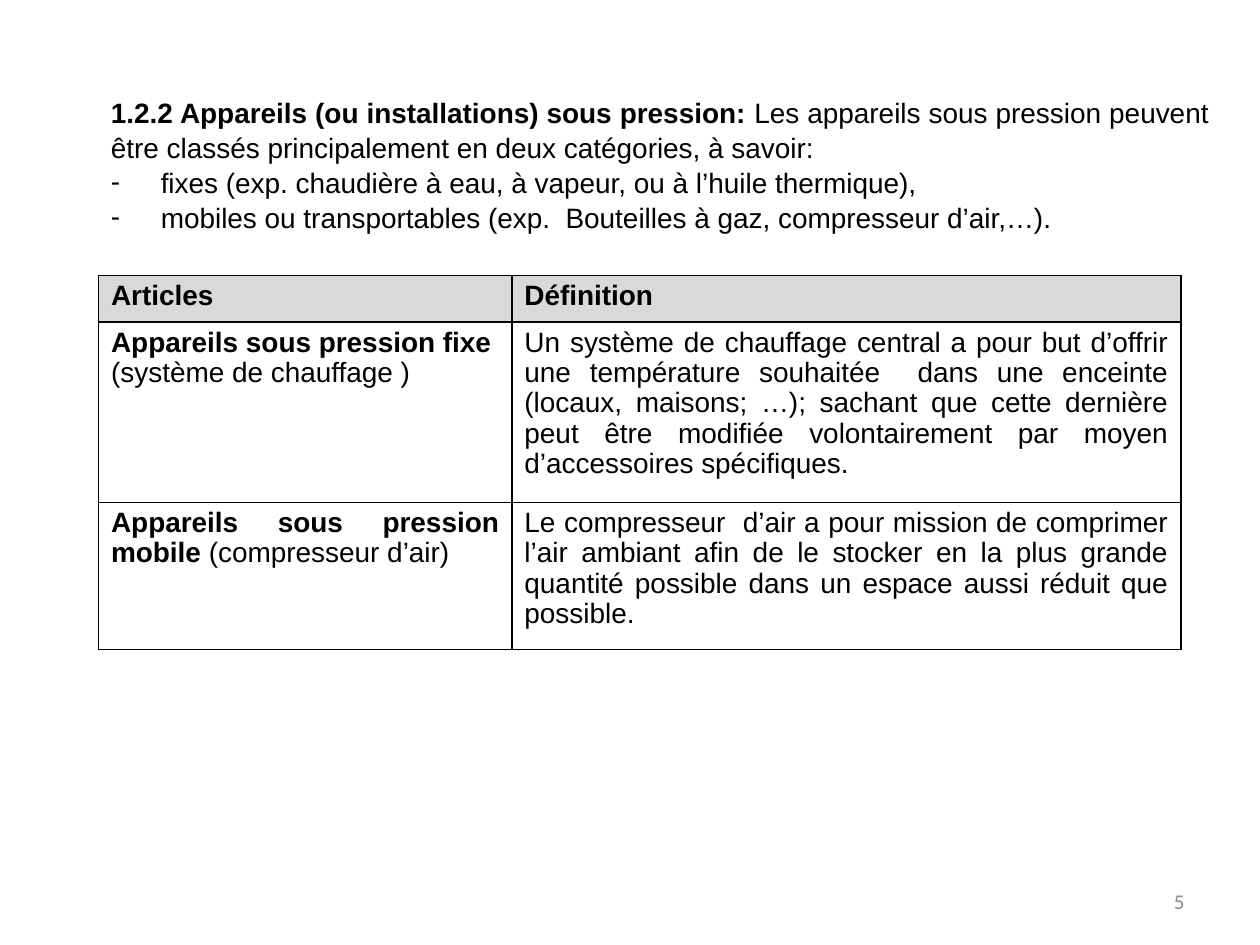
from lxml import etree
from pptx import Presentation
from pptx.dml.color import RGBColor
from pptx.enum import text
from pptx.oxml import ns
from pptx.util import Pt

HUES = {"ink": "000000", "head": "D9D9D9", "page": "8C8C8C"}


def add(node, tag, **attrs):
    return etree.SubElement(node, ns.qn(tag), attrs)


def write(frame, paras, lead=1.0, align="JUSTIFY", font="Arial", size=16, hue="ink"):
    frame.word_wrap = True
    for i, runs in enumerate(paras):
        para = frame.paragraphs[0] if i == 0 else frame.add_paragraph()
        para.alignment = getattr(text.PP_ALIGN, align)
        para.line_spacing = lead
        for words, bold in runs:
            run = para.add_run()
            run.text = words
            run.font.name = font
            run.font.size = Pt(size)
            run.font.bold = bold
            run.font.color.rgb = RGBColor.from_string(HUES[hue])


deck = Presentation()
deck.slide_width, deck.slide_height = Pt(720), Pt(540)
slide = deck.slides.add_slide(deck.slide_layouts[6])

page = slide.shapes.add_textbox(Pt(516), Pt(500.5), Pt(168), Pt(28.75)).text_frame
page.vertical_anchor = text.MSO_ANCHOR.MIDDLE
write(page, [[("5", False)]], align="RIGHT", font="Calibri", size=12, hue="page")

intro = slide.shapes.add_textbox(Pt(56.3), Pt(50.4), Pt(641.5), Pt(85)).text_frame
write(intro, [
    [("1.2.2 Appareils (ou installations) sous pression: ", True),
     ("Les appareils sous pression peuvent être classés principalement en deux catégories, à savoir:", False)],
    [("fixes (exp. chaudière à eau, à vapeur, ou à l’huile thermique),", False)],
    [("mobiles ou transportables (exp.  Bouteilles à gaz, compresseur d’air,…).", False)],
], lead=1.04)
for para in intro.paragraphs[1:]:
    props = para._p.get_or_add_pPr()
    props.set("marL", str(Pt(28.5)))
    props.set("indent", str(Pt(-28.5)))
    add(props, "a:buFont", typeface="Arial")
    add(props, "a:buChar", char="-")

rows = [
    [[[("Articles", True)]], [[("Définition", True)]]],
    [[[("Appareils sous pression fixe", True)], [("(système de chauffage )", False)]],
     [[("Un système de chauffage central a pour but d’offrir une température souhaitée  dans une enceinte "
        "(locaux, maisons; …); sachant que cette dernière peut être modifiée volontairement par moyen "
        "d’accessoires spécifiques.", False)]]],
    [[[("Appareils sous pression mobile ", True), ("(compresseur d’air)", False)]],
     [[("Le compresseur  d’air a pour mission de comprimer l’air ambiant afin de le stocker en la plus grande "
        "quantité possible dans un espace aussi réduit que possible.", False)]]],
]
wides, highs = [236.2, 382.3], [26.7, 103, 84]
table = slide.shapes.add_table(3, 2, Pt(56.3), Pt(157.4), Pt(sum(wides)), Pt(sum(highs))).table
for col, wide in zip(table.columns, wides):
    col.width = Pt(wide)
for r, (row, high) in enumerate(zip(rows, highs)):
    table.rows[r].height = Pt(high)
    for c, paras in enumerate(row):
        cell = table.cell(r, c)
        write(cell.text_frame, paras, lead=0.97)
        props = cell._tc.get_or_add_tcPr()
        for side in ("L", "R", "T", "B"):
            line = add(props, f"a:ln{side}", w=str(Pt(1)))
            add(add(line, "a:solidFill"), "a:srgbClr", val=HUES["ink"])
        if r == 0:
            cell.fill.solid()
            cell.fill.fore_color.rgb = RGBColor.from_string(HUES["head"])
        else:
            cell.fill.background()

deck.save("out.pptx")
